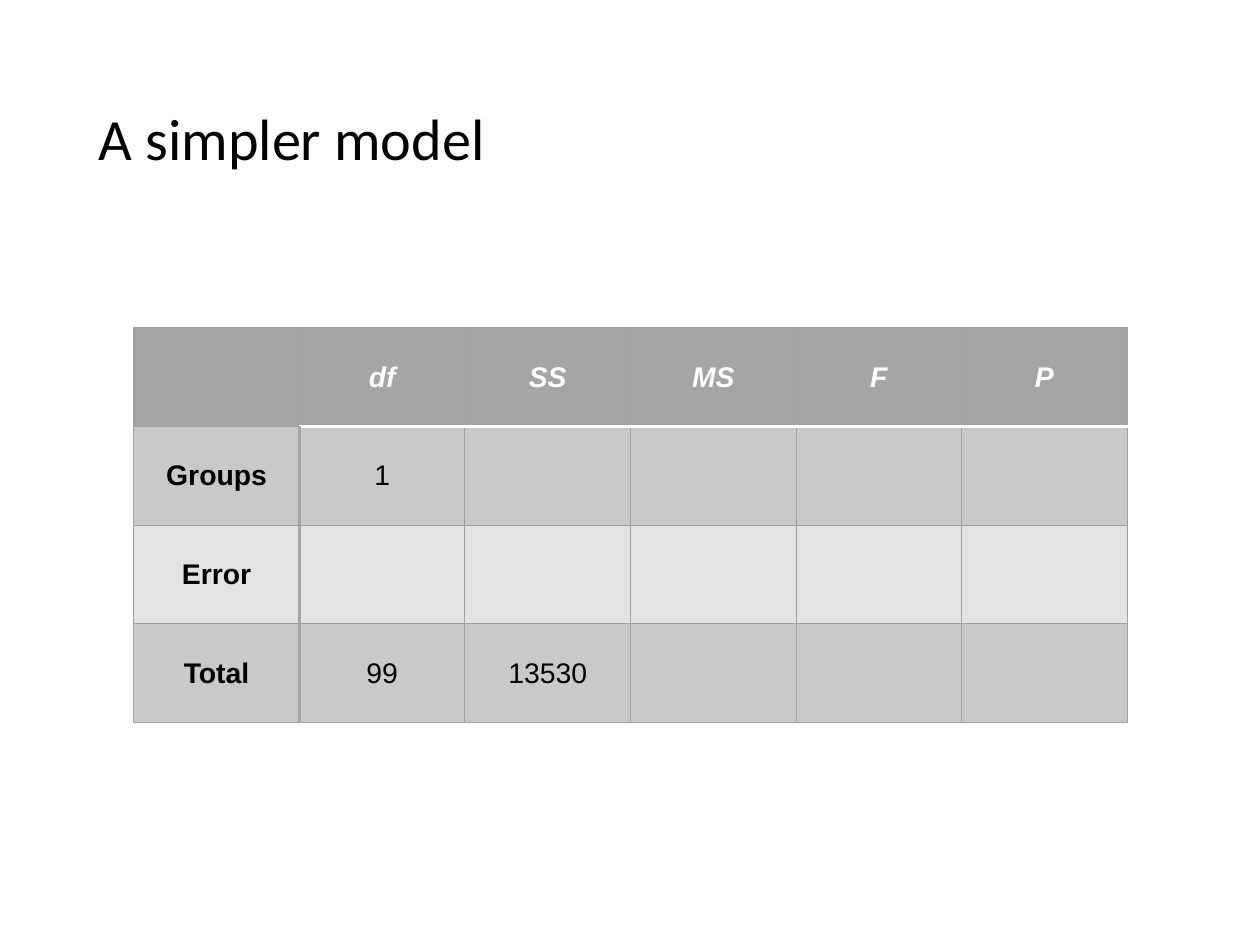
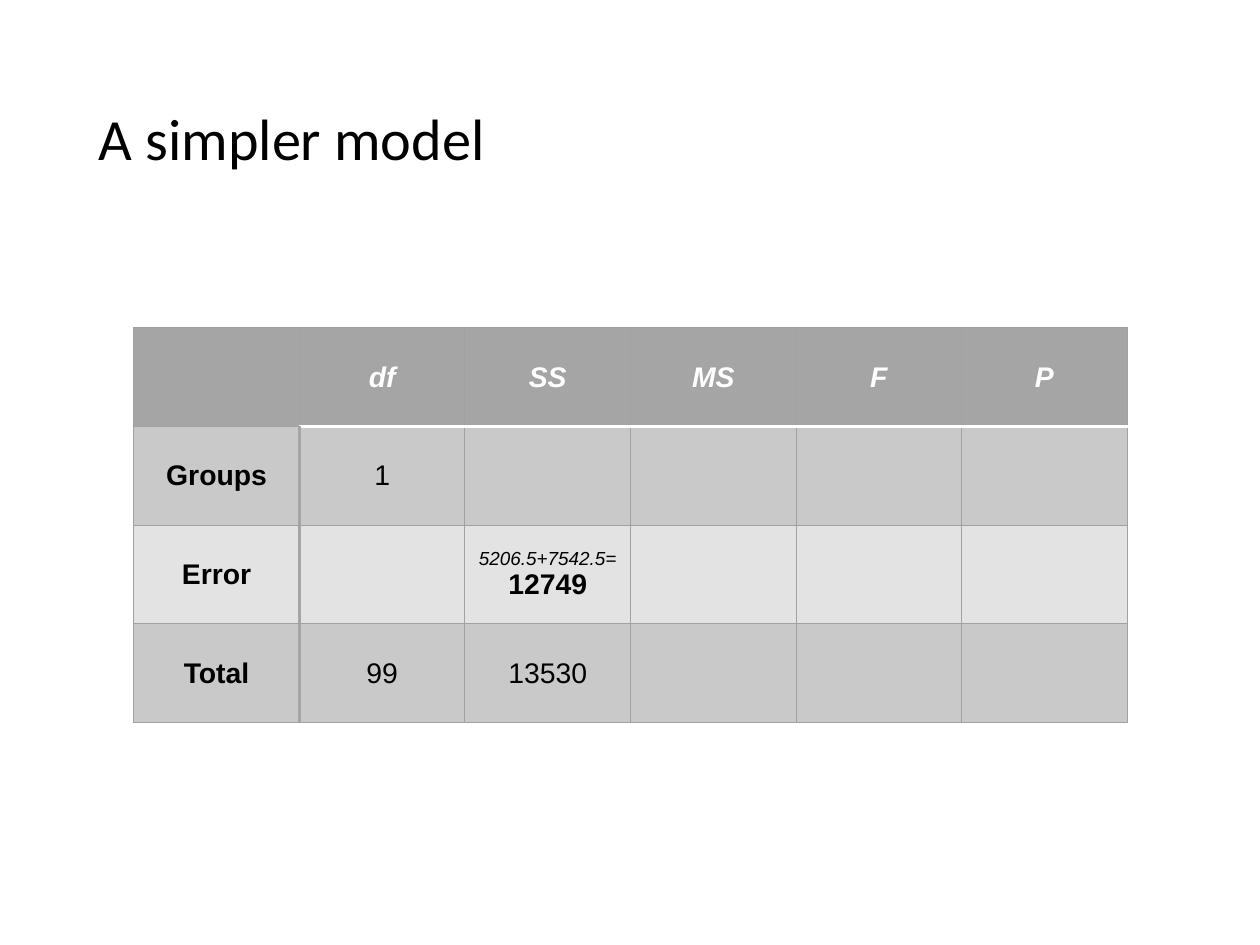
"""Build two slides that fill in an ANOVA table step by step."""
import pptx
import pptx.dml.color
import pptx.enum.text
import pptx.oxml
import pptx.oxml.ns
import pptx.util

Inches, Pt = pptx.util.Inches, pptx.util.Pt
RGB = pptx.dml.color.RGBColor
MIDDLE = pptx.enum.text.MSO_ANCHOR.MIDDLE
CENTER = pptx.enum.text.PP_ALIGN.CENTER
BLACK, WHITE = RGB(0, 0, 0), RGB(255, 255, 255)
HEAD, DARK, LIGHT = RGB(0xA5, 0xA5, 0xA5), RGB(0xC9, 0xC9, 0xC9), RGB(0xE3, 0xE3, 0xE3)
GRID = RGB(0xA1, 0xA1, 0xA1)
TITLE = "A simpler model"
ROWS = [
    ["", "df", "SS", "MS", "F", "P"],
    ["Groups", "1", "", "", "", ""],
    ["Error", "", "", "", "", ""],
    ["Total", "99", "13530", "", "", ""],
]
SUM = "5206.5+7542.5="
STEPS = [{}, {(2, 2): [SUM, "12749"]}]


def style(par, size, name, color, bold=False, italic=False):
    font = par.font
    font.size, font.name, font.color.rgb = Pt(size), name, color
    font.bold, font.italic = bold, italic


def edge(cell, side, color, width):
    line = pptx.oxml.parse_xml(
        f'<a:ln{side} {pptx.oxml.ns.nsdecls("a")} w="{Pt(width)}">'
        f'<a:solidFill><a:srgbClr val="{color}"/></a:solidFill></a:ln{side}>')
    cell._tc.get_or_add_tcPr().append(line)


deck = pptx.Presentation()
deck.slide_width, deck.slide_height = Inches(11.11), Inches(8.33)

for step in STEPS:
    slide = deck.slides.add_slide(deck.slide_layouts[6])
    box = slide.shapes.add_textbox(Inches(0.76), Inches(0.44), Inches(9.58), Inches(1.61))
    frame = box.text_frame
    frame.word_wrap = True
    frame.vertical_anchor = MIDDLE
    frame.margin_left = frame.margin_right = Inches(0.11)
    frame.margin_top = frame.margin_bottom = Inches(0.11)
    frame.text = TITLE
    frame.paragraphs[0].line_spacing = 0.9
    style(frame.paragraphs[0], 37, "Calibri", BLACK)

    table = slide.shapes.add_table(
        len(ROWS), len(ROWS[0]), Inches(1.18), Inches(2.89), Inches(8.76), Inches(3.48)).table
    table.first_row = table.horz_banding = False
    for r, row in enumerate(ROWS):
        for c, text in enumerate(row):
            cell = table.cell(r, c)
            thin, rule, stub = (GRID, 0.75), (WHITE, 2), (HEAD, 2)
            edge(cell, "L", *(stub if r and c == 1 else thin))
            edge(cell, "R", *(stub if r and c == 0 else thin))
            edge(cell, "T", *(rule if r == 1 and c else thin))
            edge(cell, "B", *(rule if r == 0 and c else thin))
            cell.fill.solid()
            cell.fill.fore_color.rgb = HEAD if r == 0 else DARK if r % 2 else LIGHT
            cell.vertical_anchor = MIDDLE
            added = step.get((r, c))
            cell.text = "\n".join(added or [text])
            for par in cell.text_frame.paragraphs:
                par.alignment = CENTER
                note = par.text == SUM
                bold = not note and (r == 0 or c == 0 or bool(added))
                style(par, 12 if note else 18, "Arial", BLACK if r else WHITE,
                      bold, note or r == 0)

deck.save("out.pptx")
